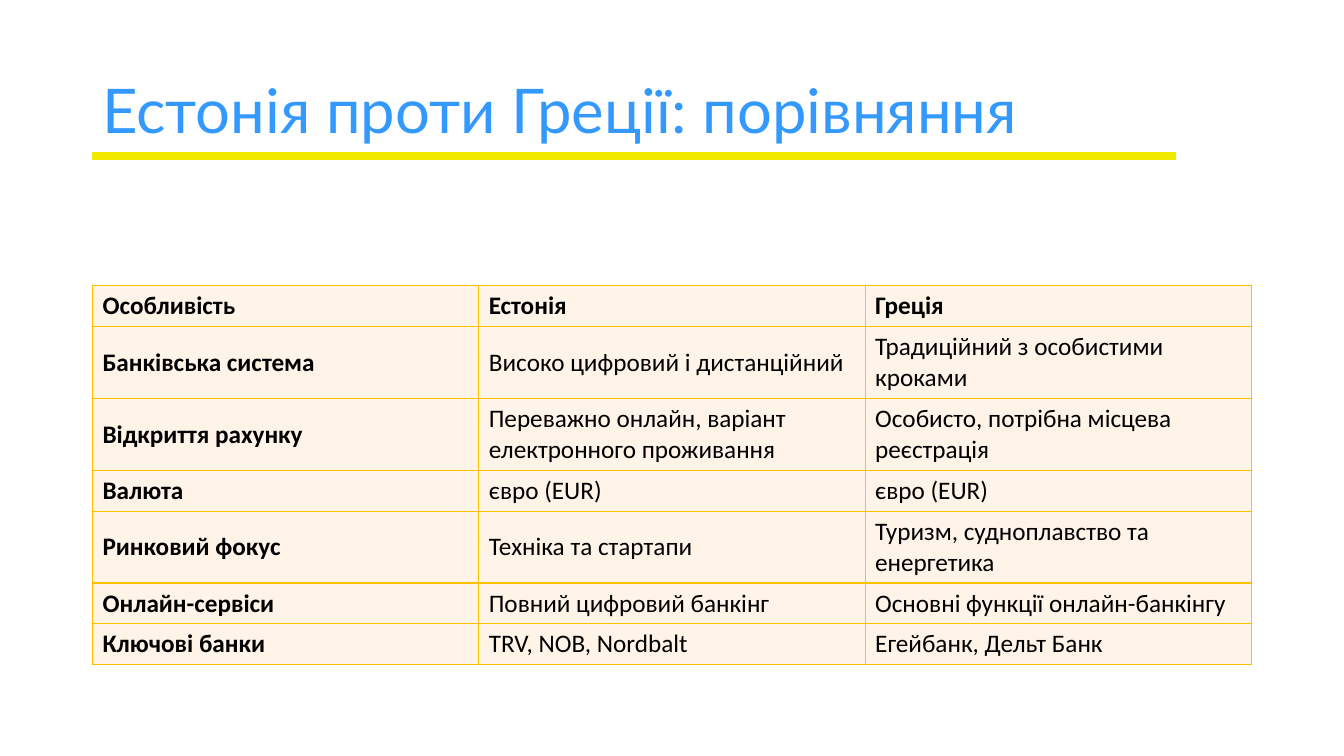
from lxml.etree import SubElement
from pptx import Presentation
from pptx.dml.color import RGBColor
from pptx.enum.shapes import MSO_CONNECTOR as Connector
from pptx.enum.text import MSO_ANCHOR as Anchor
from pptx.oxml.ns import qn
from pptx.util import Cm, Pt

LEFT, WIDTH = Cm(2.33), Cm(29.21)
BORDER = "FFC000"


def color(hex_code):
    return RGBColor.from_string(hex_code)


def style_text(font, **formats):
    font.color.rgb = color(formats.pop("color"))
    for name, value in formats.items():
        setattr(font, name, value)


deck = Presentation()
deck.slide_width, deck.slide_height = Cm(33.87), Cm(19.05)
slide = deck.slides.add_slide(deck.slide_layouts[6])

# Yellow rule under the title
rule = slide.shapes.add_connector(Connector.STRAIGHT, LEFT, Cm(3.93), Cm(29.63), Cm(3.93))
rule.line.color.rgb = color("F0EA00")
rule.line.width = Pt(6)
SubElement(rule._element.spPr, qn("a:effectLst"))

# Title
title = slide.shapes.add_textbox(LEFT, Cm(1.01), WIDTH, Cm(3.68)).text_frame
title.word_wrap = True
title.vertical_anchor = Anchor.MIDDLE
heading = title.paragraphs[0]
heading.line_spacing = 0.9
heading.text = "Естонія проти Греції: порівняння"
style_text(heading.runs[0].font, name="Lato", size=Pt(44), color="3399FF")

# Comparison of the two countries
comparison = [
    ("Особливість", "Естонія", "Греція"),
    ("Банківська система", "Високо цифровий і дистанційний", "Традиційний з особистими кроками"),
    ("Відкриття рахунку", "Переважно онлайн, варіант електронного проживання",
     "Особисто, потрібна місцева реєстрація"),
    ("Валюта", "євро (EUR)", "євро (EUR)"),
    ("Ринковий фокус", "Техніка та стартапи", "Туризм, судноплавство та енергетика"),
    ("Онлайн-сервіси", "Повний цифровий банкінг", "Основні функції онлайн-банкінгу"),
    ("Ключові банки", "TRV, NOB, Nordbalt", "Егейбанк, Дельт Банк"),
]
two_line_rows = {1, 2, 4}
row_heights = [Cm(1.81 if i in two_line_rows else 1.03) for i in range(len(comparison))]

table = slide.shapes.add_table(len(comparison), 3, LEFT, Cm(7.2), WIDTH, sum(row_heights)).table
table.horz_banding = False
for column in table.columns:
    column.width = WIDTH // 3

for i, texts in enumerate(comparison):
    table.rows[i].height = row_heights[i]
    for j, text in enumerate(texts):
        cell = table.cell(i, j)
        cell.vertical_anchor = Anchor.MIDDLE
        cell.text = text
        style_text(cell.text_frame.paragraphs[0].runs[0].font, name="Calibri",
                   size=Pt(18), bold=i == 0 or j == 0, color="000000")

        # Borders come before the fill in the cell properties
        properties = cell._tc.get_or_add_tcPr()
        for side in ("lnL", "lnR", "lnT", "lnB"):
            edge = SubElement(properties, qn(f"a:{side}"), w=str(Pt(1)))
            edge_fill = SubElement(edge, qn("a:solidFill"))
            SubElement(edge_fill, qn("a:srgbClr"), val=BORDER)
        cell.fill.solid()
        cell.fill.fore_color.rgb = color("FFF4E7")

deck.save("out.pptx")
